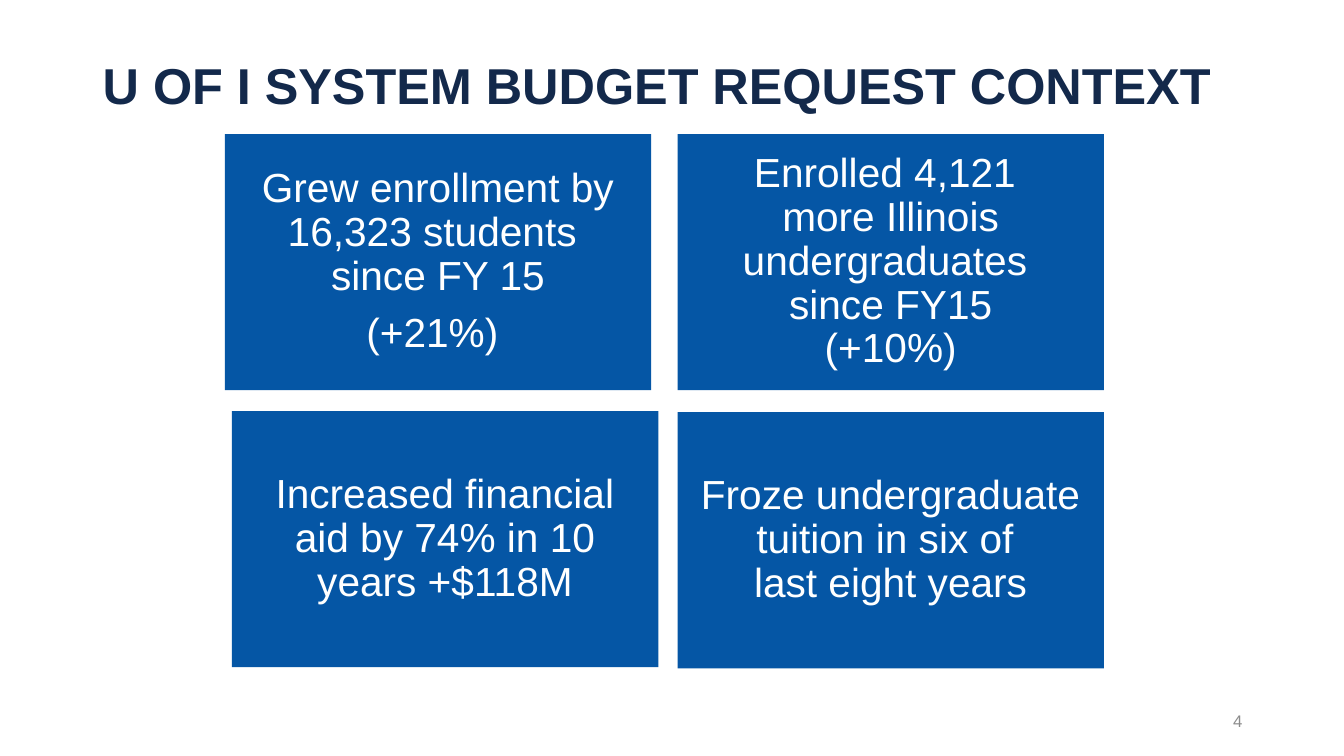
import pptx
import pptx.dml.color
import pptx.enum.shapes
import pptx.enum.text
import pptx.util

RGBColor = pptx.dml.color.RGBColor
NAVY = RGBColor(0x13, 0x29, 0x4B)
BLUE = RGBColor(0x05, 0x56, 0xA5)
WHITE = RGBColor(0xFF, 0xFF, 0xFF)
GREY = RGBColor(0x8C, 0x8C, 0x8C)
ALIGN = pptx.enum.text.PP_ALIGN

FONT = "Arial"
CARD_WIDTH, CARD_HEIGHT = 423, 254
CARD_INSET = 12

# Left, top, paragraphs and the space in points between them
CARDS = [
    (223, 133, ["Grew enrollment by 16,323 students \vsince FY 15", "(+21%) "], 10),
    (672, 133, ["Enrolled 4,121 ",
                "more Illinois undergraduates \vsince FY15\v(+10%)"], 0),
    (230, 408, ["Increased financial aid by 74% in 10 years +$118M"], 0),
    (672, 409, ["Froze undergraduate tuition in six of \vlast eight years"], 0),
]


def px(length):
    """Convert px, 100 to the inch, into EMU."""
    return pptx.util.Emu(length * 9144)


def write(frame, lines, size, color, align, spacing=1.0, gap=0, bold=False):
    frame.word_wrap = True
    frame.vertical_anchor = pptx.enum.text.MSO_ANCHOR.MIDDLE
    frame.text = "\n".join(lines)
    for index, paragraph in enumerate(frame.paragraphs):
        paragraph.alignment = align
        paragraph.line_spacing = spacing
        paragraph.space_before = pptx.util.Pt(0)
        last = index == len(lines) - 1
        paragraph.space_after = pptx.util.Pt(0 if last else gap)
        for span in paragraph.runs:
            span.font.name = FONT
            span.font.size = pptx.util.Pt(size)
            span.font.bold = bold
            span.font.color.rgb = color


def add_title(page, left, top, width, height):
    box = page.shapes.add_textbox(px(left), px(top), px(width), px(height))
    write(box.text_frame, ["U OF I SYSTEM BUDGET REQUEST CONTEXT"],
          36, NAVY, ALIGN.LEFT, spacing=0.9, bold=True)


def add_card(page, left, top, lines, gap):
    card = page.shapes.add_shape(
        pptx.enum.shapes.MSO_SHAPE.RECTANGLE,
        px(left), px(top), px(CARD_WIDTH), px(CARD_HEIGHT))
    card.shadow.inherit = False
    card.fill.solid()
    card.fill.fore_color.rgb = BLUE
    card.line.fill.background()
    frame = card.text_frame
    frame.margin_left = frame.margin_right = px(CARD_INSET)
    frame.margin_top = frame.margin_bottom = px(CARD_INSET)
    write(frame, lines, 29, WHITE, ALIGN.CENTER, spacing=0.9, gap=gap)


def add_page_number(page, left, top, width, height):
    box = page.shapes.add_textbox(px(left), px(top), px(width), px(height))
    write(box.text_frame, ["4"], 12, GREY, ALIGN.RIGHT)


def main():
    deck = pptx.Presentation()
    deck.slide_width, deck.slide_height = px(1333), px(750)
    page = deck.slides.add_slide(deck.slide_layouts[6])

    add_title(page, 92, 41, 1150, 93)
    for left, top, lines, gap in CARDS:
        add_card(page, left, top, lines, gap)
    add_page_number(page, 942, 695, 300, 40)

    deck.save("out.pptx")


if __name__ == "__main__":
    main()
